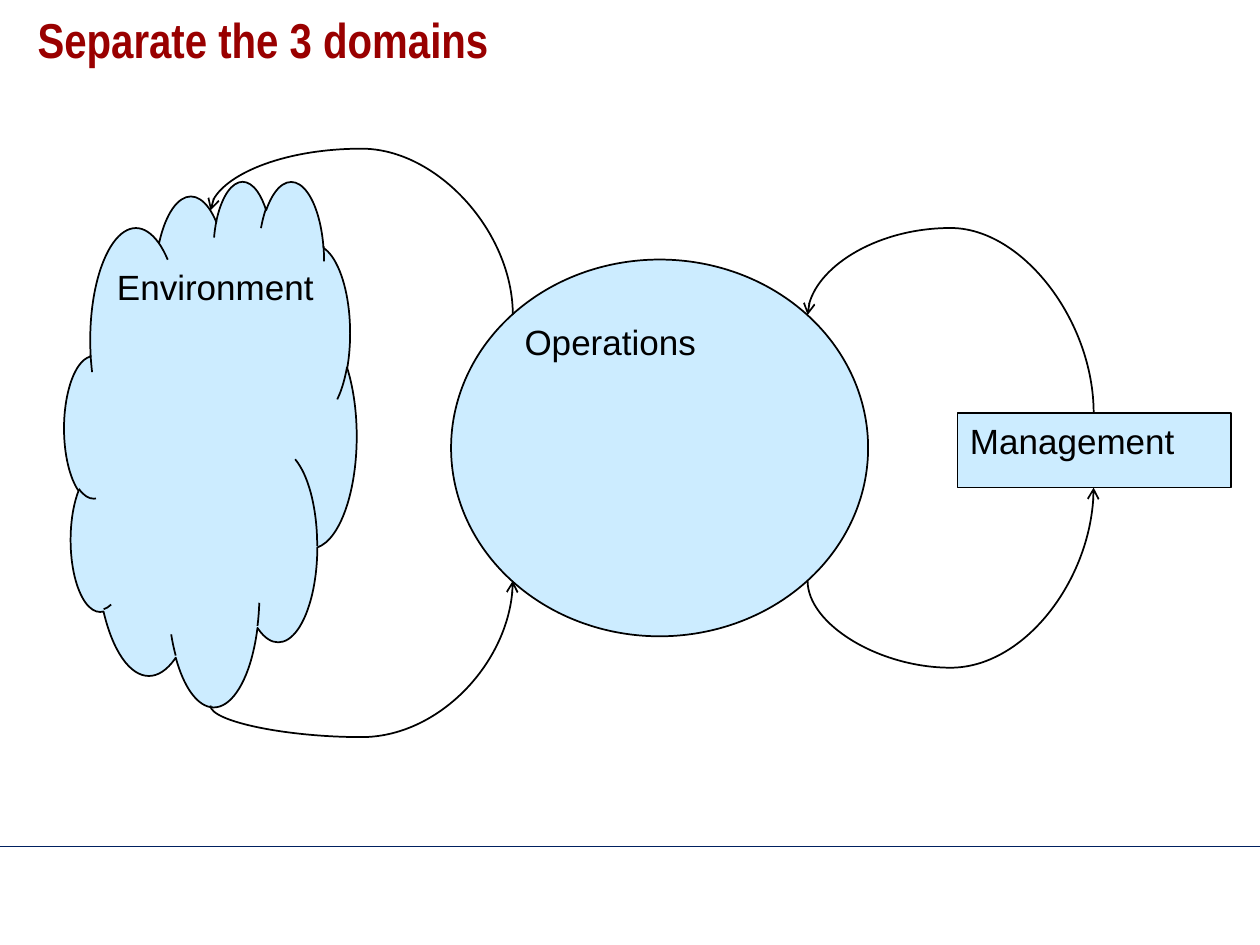
from lxml.etree import SubElement
from pptx import Presentation
from pptx.dml.color import RGBColor
from pptx.enum.shapes import MSO_CONNECTOR, MSO_SHAPE
from pptx.enum.text import MSO_ANCHOR, PP_ALIGN
from pptx.oxml.ns import qn
from pptx.util import Inches, Pt


def color(value):
    return RGBColor.from_string(value)


def write(shape, text, size=20, font="Arial", ink="000000", bold=False,
          wrap=False, spacing=None):
    frame = shape.text_frame
    frame.word_wrap = wrap
    frame.vertical_anchor = MSO_ANCHOR.TOP
    para = frame.paragraphs[0]
    para.alignment = PP_ALIGN.LEFT
    para.line_spacing = spacing
    run = para.add_run()
    run.text = text
    run.font.size = Pt(size)
    run.font.name = font
    run.font.bold = bold
    run.font.color.rgb = color(ink)


def link(slide, kind, box, ink="000000", width=1):
    left, top, wide, high = box
    line = slide.shapes.add_connector(
        kind, Inches(left), Inches(top), Inches(left + wide), Inches(top + high))
    line.line.color.rgb = color(ink)
    line.line.width = Pt(width)
    SubElement(line._element.spPr, qn("a:effectLst"))
    return line


def domain(slide, kind, box, text):
    shape = slide.shapes.add_shape(kind, *map(Inches, box))
    shape.shadow.inherit = False
    shape.fill.solid()
    shape.fill.fore_color.rgb = color("CCECFF")
    shape.line.color.rgb = color("000000")
    shape.line.width = Pt(1)
    write(shape, text)


def loop(slide, start, end, peak):
    """Curved arrow that leaves and arrives vertically, bending at height peak."""
    (x1, y1), (x2, y2) = start, end
    rise, span = y1 - y2, abs(x2 - x1)
    # The curve is laid out sideways around its centre, then turned upright
    box = ((x1 + x2 - rise) / 2, (y1 + y2 - span) / 2, rise, span)
    line = link(slide, MSO_CONNECTOR.CURVE, box)
    props = line._element.spPr
    frame = props.find(qn("a:xfrm"))
    frame.set("flipV", "1")
    if x2 > x1:
        frame.set("flipH", "1")
    frame.set("rot", str((90 if x2 > x1 else 270) * 60000))
    shape = props.find(qn("a:prstGeom"))
    guides = shape.find(qn("a:avLst"))
    if guides is None:
        guides = SubElement(shape, qn("a:avLst"))
    bend = round((y1 - peak) / rise * 100000)
    SubElement(guides, qn("a:gd"), name="adj1", fmla=f"val {bend}")
    SubElement(props.find(qn("a:ln")), qn("a:tailEnd"), type="arrow")


def header(slide, box):
    title = slide.shapes.add_textbox(*map(Inches, box))
    write(title, "Separate the 3 domains", size=28, font="Arial Narrow",
          ink="990000", bold=True, wrap=True, spacing=0.9)


def diagram(slide):
    # Domains
    domain(slide, MSO_SHAPE.CLOUD, (0.51, 1.43, 2.32, 4.17), "Environment")
    domain(slide, MSO_SHAPE.OVAL, (3.58, 2.06, 3.31, 2.99), "Operations")
    domain(slide, MSO_SHAPE.RECTANGLE, (7.6, 3.28, 2.17, 0.59), "Management")

    # Feedback loops: environment and operations, then operations and management
    loop(slide, (4.07, 2.5), (1.67, 1.67), 1.18)
    loop(slide, (1.67, 5.6), (4.07, 4.61), 5.85)
    loop(slide, (8.68, 3.28), (6.41, 2.5), 1.81)
    loop(slide, (6.41, 4.61), (8.68, 3.87), 5.3)


def main():
    deck = Presentation()
    deck.slide_width, deck.slide_height = Inches(10), Inches(7.5)
    slide = deck.slides.add_slide(deck.slide_layouts[6])
    # Footer rule
    link(slide, MSO_CONNECTOR.STRAIGHT, (0, 6.72, 10, 0), "002060", 0.75)
    header(slide, (0.2, 0.08, 9.61, 0.83))
    diagram(slide)
    deck.save("out.pptx")


if __name__ == "__main__":
    main()
